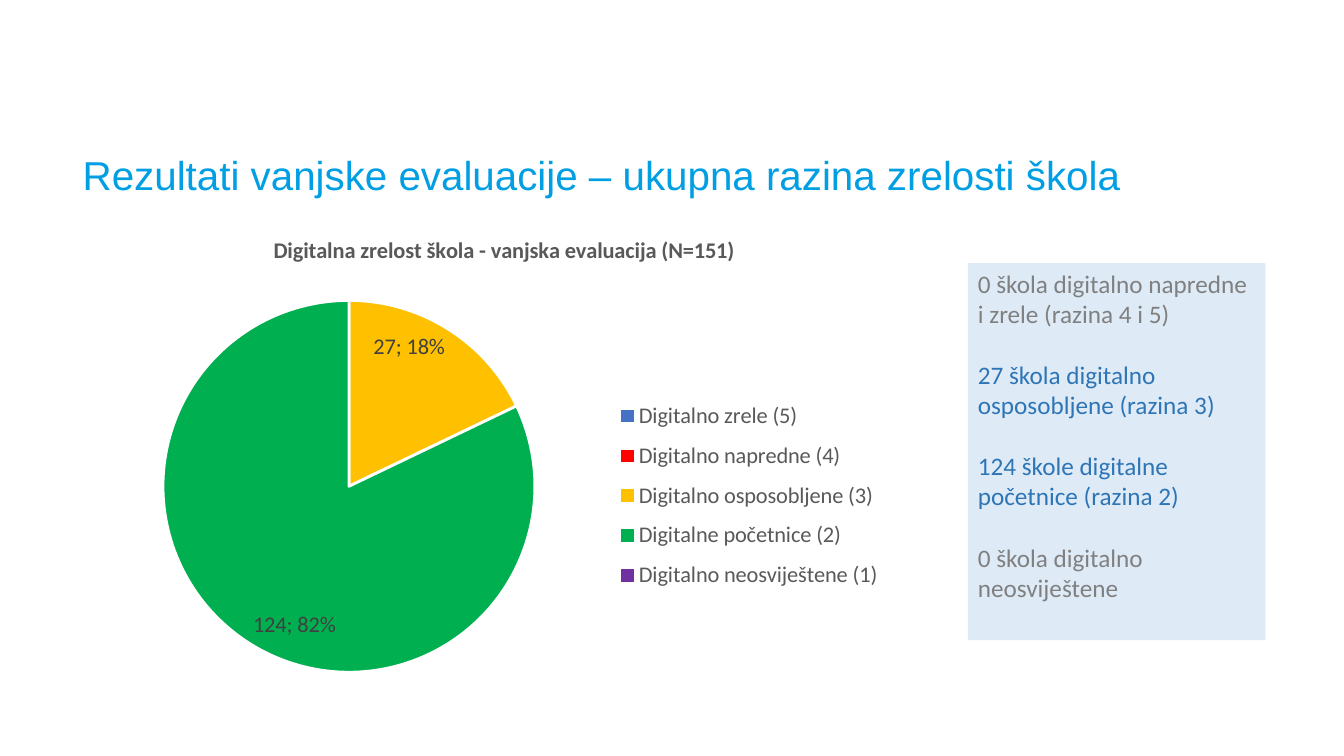
from lxml import etree
from pptx import Presentation
from pptx.chart.data import CategoryChartData
from pptx.dml.color import RGBColor
from pptx.enum.chart import XL_CHART_TYPE, XL_LABEL_POSITION, XL_LEGEND_POSITION
from pptx.enum.shapes import MSO_SHAPE
from pptx.enum.text import MSO_ANCHOR, PP_ALIGN
from pptx.oxml.ns import qn
from pptx.util import Inches, Pt

PIE = XL_CHART_TYPE.PIE
INSIDE_END = XL_LABEL_POSITION.INSIDE_END
RIGHT = XL_LEGEND_POSITION.RIGHT
RECT = MSO_SHAPE.RECTANGLE
TOP, BOTTOM = MSO_ANCHOR.TOP, MSO_ANCHOR.BOTTOM
LEFT = PP_ALIGN.LEFT

WHITE = RGBColor(0xFF, 0xFF, 0xFF)
CYAN = RGBColor(0x00, 0x9F, 0xE3)
PALE_BLUE = RGBColor(0xDE, 0xEB, 0xF7)
BLUE = RGBColor(0x2E, 0x75, 0xB6)
GRAY = RGBColor(0x80, 0x80, 0x80)
DARK_GRAY = RGBColor(0x59, 0x59, 0x59)
LABEL_GRAY = RGBColor(0x40, 0x40, 0x40)

LEVELS = [
    ("Digitalno zrele (5)", 0, RGBColor(0x44, 0x72, 0xC4)),
    ("Digitalno napredne (4)", 0, RGBColor(0xFF, 0x00, 0x00)),
    ("Digitalno osposobljene (3)", 27, RGBColor(0xFF, 0xC0, 0x00)),
    ("Digitalne početnice (2)", 124, RGBColor(0x00, 0xB0, 0x50)),
    ("Digitalno neosviještene (1)", 0, RGBColor(0x70, 0x30, 0xA0)),
]
SUMMARY = [
    ("0 škola digitalno napredne i zrele (razina 4 i 5)", GRAY),
    ("27 škola digitalno osposobljene (razina 3)", BLUE),
    ("124 škole digitalne početnice (razina 2)", BLUE),
    ("0 škola digitalno neosviještene", GRAY),
]


def write(p, text, size=18, color=GRAY, font="Calibri", bold=False, before=0, spacing=1.0):
    p.alignment = LEFT
    p.space_before = Pt(before)
    p.line_spacing = spacing
    r = p.add_run()
    r.text = text
    r.font.name, r.font.size, r.font.bold = font, Pt(size), bold
    r.font.color.rgb = color


def place(parent, x, y, w, h, inner=False):
    """Give a chart part a manual layout, in shares of the chart's size."""
    for old in parent.findall(qn("c:layout")):
        parent.remove(old)
    layout = etree.Element(qn("c:layout"))
    manual = etree.SubElement(layout, qn("c:manualLayout"))
    values = [("layoutTarget", "inner")] if inner else []
    values += [("xMode", "edge"), ("yMode", "edge"), ("x", x), ("y", y), ("w", w), ("h", h)]
    for tag, value in values:
        etree.SubElement(manual, qn("c:" + tag)).set("val", str(value))
    parent.insert(0 if inner else 1, layout)


prs = Presentation()
prs.slide_width, prs.slide_height = Inches(13.33), Inches(7.5)
s = prs.slides.add_slide(prs.slide_layouts[5])

# Title
title = s.shapes.title
title.left, title.top, title.width, title.height = map(Inches, (0.72, 1.45, 11.5, 0.58))
tf = title.text_frame
tf.word_wrap, tf.vertical_anchor = True, BOTTOM
write(tf.paragraphs[0], "Rezultati vanjske evaluacije – ukupna razina zrelosti škola",
      size=28.8, color=CYAN, font="Arial", spacing=0.9)

# Pie chart
data = CategoryChartData()
data.categories = [name for name, _, _ in LEVELS]
data.add_series("Series 1", [count for _, count, _ in LEVELS])
chart = s.shapes.add_chart(PIE, *map(Inches, (0.95, 2.14, 8.1, 4.67)), data).chart
chart.font.name, chart.font.size = "Calibri", Pt(10)
chart.has_title = True
write(chart.chart_title.text_frame.paragraphs[0],
      "Digitalna zrelost škola - vanjska evaluacija (N=151)",
      size=16, color=DARK_GRAY, bold=True)
chart.chart_title.include_in_layout = False

chart.has_legend = True
legend = chart.legend
legend.position, legend.include_in_layout = RIGHT, False
legend.font.name, legend.font.size = "Calibri", Pt(16)
legend.font.color.rgb = DARK_GRAY

plot = chart.plots[0]
plot.vary_by_categories = True
series = plot.series[0]
series.data_labels.show_value = False
for i, (_, count, color) in enumerate(LEVELS):
    point = series.points[i]
    point.format.fill.solid()
    point.format.fill.fore_color.rgb = color
    point.format.line.color.rgb = WHITE
    point.format.line.width = Pt(2)
    if count:
        label = point.data_label
        label.font.name, label.font.size = "Calibri", Pt(16)
        label.font.color.rgb = LABEL_GRAY
        label.position = INSIDE_END

# Labels show "value; share"
for dlbl in chart.element.iter(qn("c:dLbl")):
    dlbl.find(qn("c:showPercent")).set("val", "1")
    etree.SubElement(dlbl, qn("c:separator")).text = "; "

place(chart.element.find(".//" + qn("c:plotArea")), 0.08, 0.18, 0.46, 0.79, inner=True)
place(chart.element.find(".//" + qn("c:legend")), 0.63, 0.37, 0.34, 0.45)

# Summary panel
sp = s.shapes.add_shape(RECT, *map(Inches, (9.6, 2.61, 2.95, 3.74)))
sp.shadow.inherit = False
sp.fill.solid()
sp.fill.fore_color.rgb = PALE_BLUE
sp.line.fill.background()
tf = sp.text_frame
tf.word_wrap, tf.vertical_anchor = True, TOP
for i, (text, color) in enumerate(SUMMARY):
    p = tf.add_paragraph() if i else tf.paragraphs[0]
    write(p, text, color=color, before=22 if i else 0)

prs.save("out.pptx")
